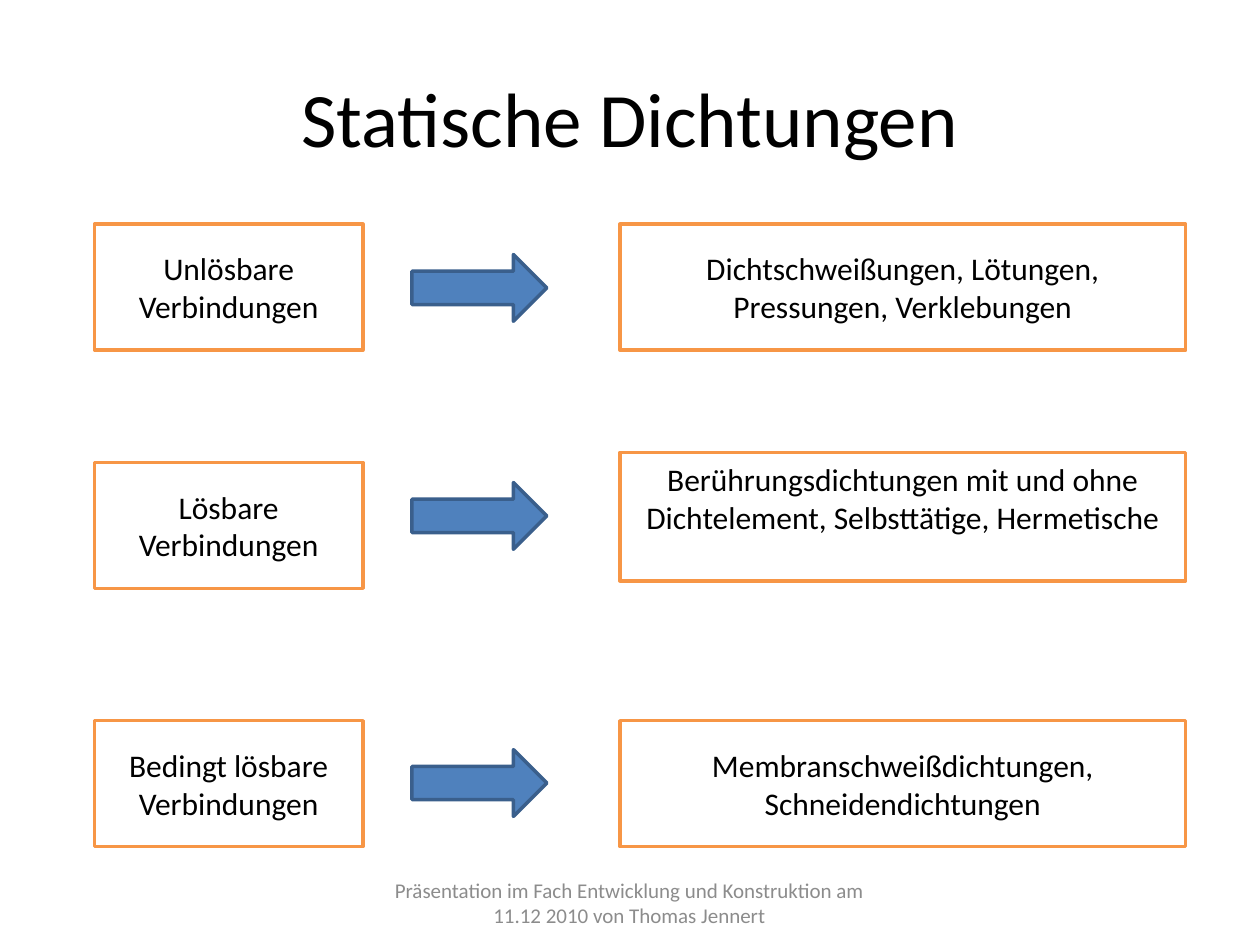
from dataclasses import dataclass

from pptx import Presentation
from pptx.dml.color import RGBColor
from pptx.enum.shapes import MSO_SHAPE
from pptx.enum.text import MSO_ANCHOR, PP_ALIGN
from pptx.shapes.autoshape import Shape
from pptx.slide import Slide
from pptx.util import Inches, Pt

BLACK = RGBColor(0x00, 0x00, 0x00)
WHITE = RGBColor(0xFF, 0xFF, 0xFF)
GRAY = RGBColor(0x8C, 0x8C, 0x8C)
ORANGE = RGBColor(0xF7, 0x96, 0x46)
BLUE = RGBColor(0x4F, 0x81, 0xBD)
DARK_BLUE = RGBColor(0x3A, 0x5F, 0x8C)


@dataclass(frozen=True)
class Area:
    left: float
    top: float
    width: float
    height: float

    def lengths(self) -> list[Inches]:
        return [Inches(value) for value in (self.left, self.top, self.width, self.height)]


@dataclass(frozen=True)
class SealRow:
    connection: str
    seals: str
    connection_top: float
    arrow_top: float
    seals_top: float
    seals_height: float = 1
    bottom_margin: float = 0.05


ROWS = [
    SealRow("Unlösbare Verbindungen",
            "Dichtschweißungen, Lötungen, Pressungen, Verklebungen",
            1.78, 2.02, 1.78),
    SealRow("Lösbare Verbindungen",
            "Berührungsdichtungen mit und ohne Dichtelement, Selbsttätige, Hermetische",
            3.67, 3.83, 3.59, seals_height=1.02, bottom_margin=0.35),
    SealRow("Bedingt lösbare Verbindungen",
            "Membranschweißdichtungen, Schneidendichtungen",
            5.72, 5.95, 5.72),
]


def write_text(box: Shape, text: str, size: int, color: RGBColor) -> None:
    frame = box.text_frame
    frame.word_wrap = True
    frame.vertical_anchor = MSO_ANCHOR.MIDDLE
    frame.text = text
    para = frame.paragraphs[0]
    para.alignment = PP_ALIGN.CENTER
    font = para.runs[0].font
    font.name = "Calibri"
    font.size = Pt(size)
    font.color.rgb = color


def add_label(page: Slide, area: Area, text: str, size: int, color: RGBColor) -> None:
    write_text(page.shapes.add_textbox(*area.lengths()), text, size, color)


def add_figure(page: Slide, kind: MSO_SHAPE, area: Area, fill: RGBColor, line: RGBColor) -> Shape:
    figure = page.shapes.add_shape(kind, *area.lengths())
    figure.shadow.inherit = False
    figure.fill.solid()
    figure.fill.fore_color.rgb = fill
    figure.line.color.rgb = line
    figure.line.width = Pt(2)
    return figure


def add_box(page: Slide, area: Area, text: str, bottom_margin: float = 0.05) -> None:
    box = add_figure(page, MSO_SHAPE.RECTANGLE, area, WHITE, ORANGE)
    write_text(box, text, 18, BLACK)
    box.text_frame.margin_bottom = Inches(bottom_margin)


def add_row(page: Slide, row: SealRow) -> None:
    add_box(page, Area(0.75, row.connection_top, 2.13, 1), row.connection)
    add_figure(page, MSO_SHAPE.RIGHT_ARROW, Area(3.27, row.arrow_top, 1.07, 0.53), BLUE, DARK_BLUE)
    add_box(page, Area(4.92, row.seals_top, 4.49, row.seals_height), row.seals, row.bottom_margin)


def main() -> None:
    deck = Presentation()
    deck.slide_width = Inches(10)
    deck.slide_height = Inches(7.5)
    page = deck.slides.add_slide(deck.slide_layouts[6])
    add_label(page, Area(0.5, 0.3, 9, 1.25), "Statische Dichtungen", 44, BLACK)
    add_label(page, Area(2.95, 6.98, 4.09, 0.37),
              "Präsentation im Fach Entwicklung und Konstruktion am 11.12 2010 von Thomas Jennert",
              12, GRAY)
    for row in ROWS:
        add_row(page, row)
    deck.save("out.pptx")


if __name__ == "__main__":
    main()
